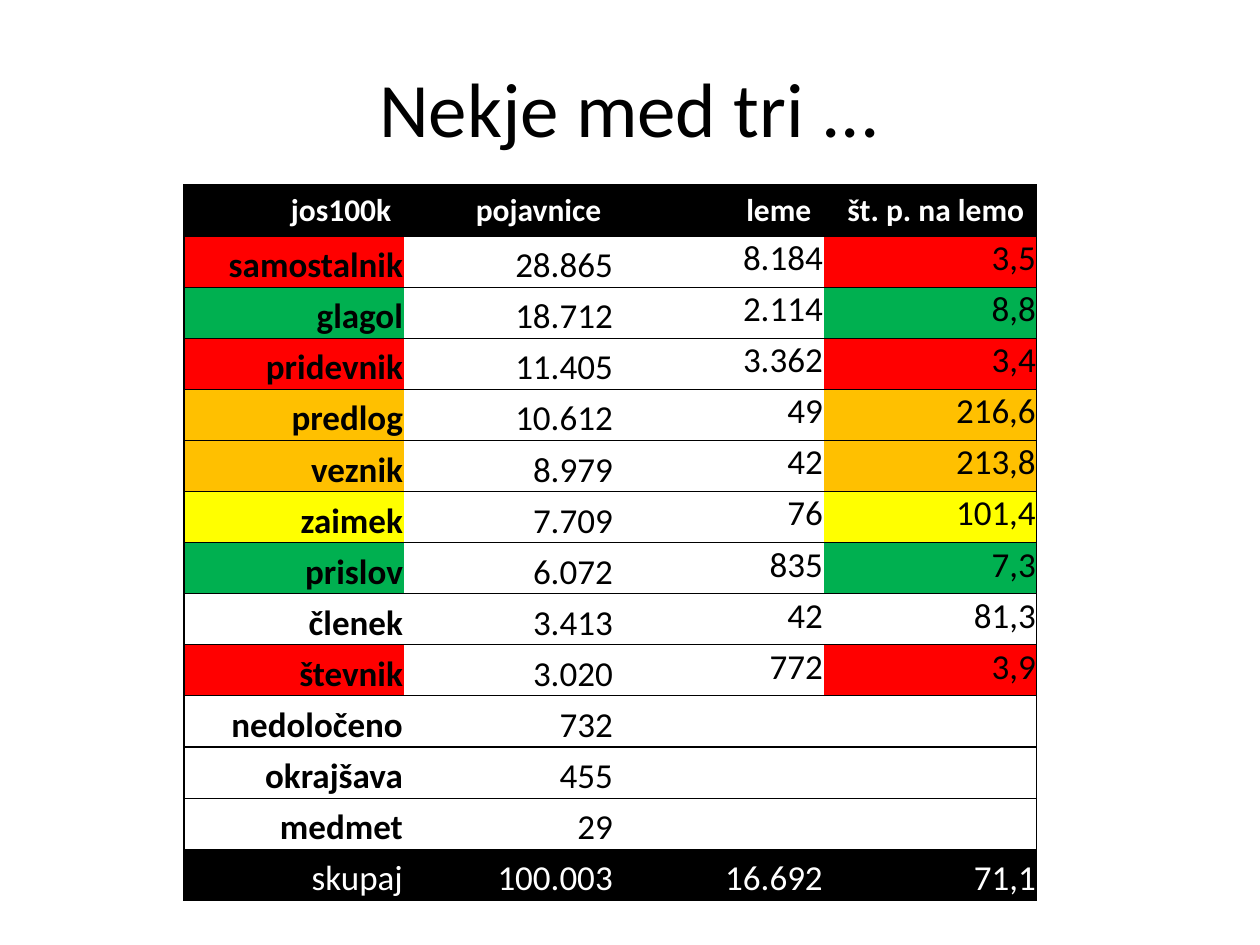
from lxml import etree
from pptx import Presentation
from pptx.dml.color import RGBColor
from pptx.enum import text
from pptx.oxml import ns
from pptx.util import Emu, Pt

PX = 914400 / 126
COLORS = {"black": "000000", "white": "FFFFFF", "red": "FF0000",
          "green": "00B050", "orange": "FFC000", "yellow": "FFFF00"}
HEADER = ("jos100k", "pojavnice", "leme", "št. p. na lemo")
# word class, tokens, lemmas, tokens per lemma, highlight colour
WORD_CLASSES = [
    ("samostalnik", "28.865", "8.184", "3,5", "red"),
    ("glagol", "18.712", "2.114", "8,8", "green"),
    ("pridevnik", "11.405", "3.362", "3,4", "red"),
    ("predlog", "10.612", "49", "216,6", "orange"),
    ("veznik", "8.979", "42", "213,8", "orange"),
    ("zaimek", "7.709", "76", "101,4", "yellow"),
    ("prislov", "6.072", "835", "7,3", "green"),
    ("členek", "3.413", "42", "81,3", "white"),
    ("števnik", "3.020", "772", "3,9", "red"),
    ("nedoločeno", "732", "", "", "white"),
    ("okrajšava", "455", "", "", "white"),
    ("medmet", "29", "", "", "white"),
]
TOTAL = ("skupaj", "100.003", "16.692", "71,1")
COLUMN_WIDTHS = (220, 210, 210, 213)


def px(*lengths):
    return [Emu(round(n * PX)) for n in lengths]


def set_borders(cell, visible):
    """Draw the sides named in visible (L, R, T, B) and hide the others."""
    tc_pr = cell._tc.get_or_add_tcPr()
    for side in "LRTB":
        ln = etree.SubElement(tc_pr, ns.qn(f"a:ln{side}"), w=str(Pt(0.75)))
        if side in visible:
            fill = etree.SubElement(ln, ns.qn("a:solidFill"))
            etree.SubElement(fill, ns.qn("a:srgbClr"), val=COLORS["black"])
        else:
            etree.SubElement(ln, ns.qn("a:noFill"))


prs = Presentation()
prs.slide_width, prs.slide_height = px(1260, 945)
s = prs.slides.add_slide(prs.slide_layouts[5])

title = s.shapes.title
title.left, title.top, title.width, title.height = px(63, 38, 1134, 137)
tf = title.text_frame
tf.text = "Nekje med tri ..."
tf.vertical_anchor = text.MSO_ANCHOR.MIDDLE
p = tf.paragraphs[0]
p.alignment = text.PP_ALIGN.CENTER
font = p.runs[0].font
font.name, font.size = "Calibri", Pt(44)
font.color.rgb = RGBColor.from_string(COLORS["black"])

rows = [HEADER + ("black",), *WORD_CLASSES, TOTAL + ("black",)]
last_row, last_col = len(rows) - 1, len(HEADER) - 1
table = s.shapes.add_table(len(rows), len(HEADER),
                           *px(184, 185, sum(COLUMN_WIDTHS), 716)).table
table.first_row = table.horz_banding = False
for column, width in zip(table.columns, px(*COLUMN_WIDTHS)):
    column.width = width

for i, (*values, highlight) in enumerate(rows):
    is_header, is_dark = i == 0, i in (0, last_row)
    for j, value in enumerate(values):
        cell = table.cell(i, j)
        set_borders(cell, "TB" + "L" * (j == 0) + "R" * (j == last_col))
        fill = highlight if is_dark or j in (0, last_col) else "white"
        cell.fill.solid()
        cell.fill.fore_color.rgb = RGBColor.from_string(COLORS[fill])
        if not value:
            continue
        if not is_header:
            cell.margin_left, cell.margin_top, cell.margin_right, cell.margin_bottom = px(1, 1, 1, 0)
            if j < 2 or is_dark:
                cell.vertical_anchor = text.MSO_ANCHOR.BOTTOM
        p = cell.text_frame.paragraphs[0]
        p.text = value
        p.alignment = text.PP_ALIGN.RIGHT
        font = p.runs[0].font
        font.name, font.size = "Calibri", Pt(18 if is_header else 20)
        font.bold = is_header or (j == 0 and not is_dark)
        font.color.rgb = RGBColor.from_string(COLORS["white" if is_dark else "black"])

prs.save("out.pptx")
